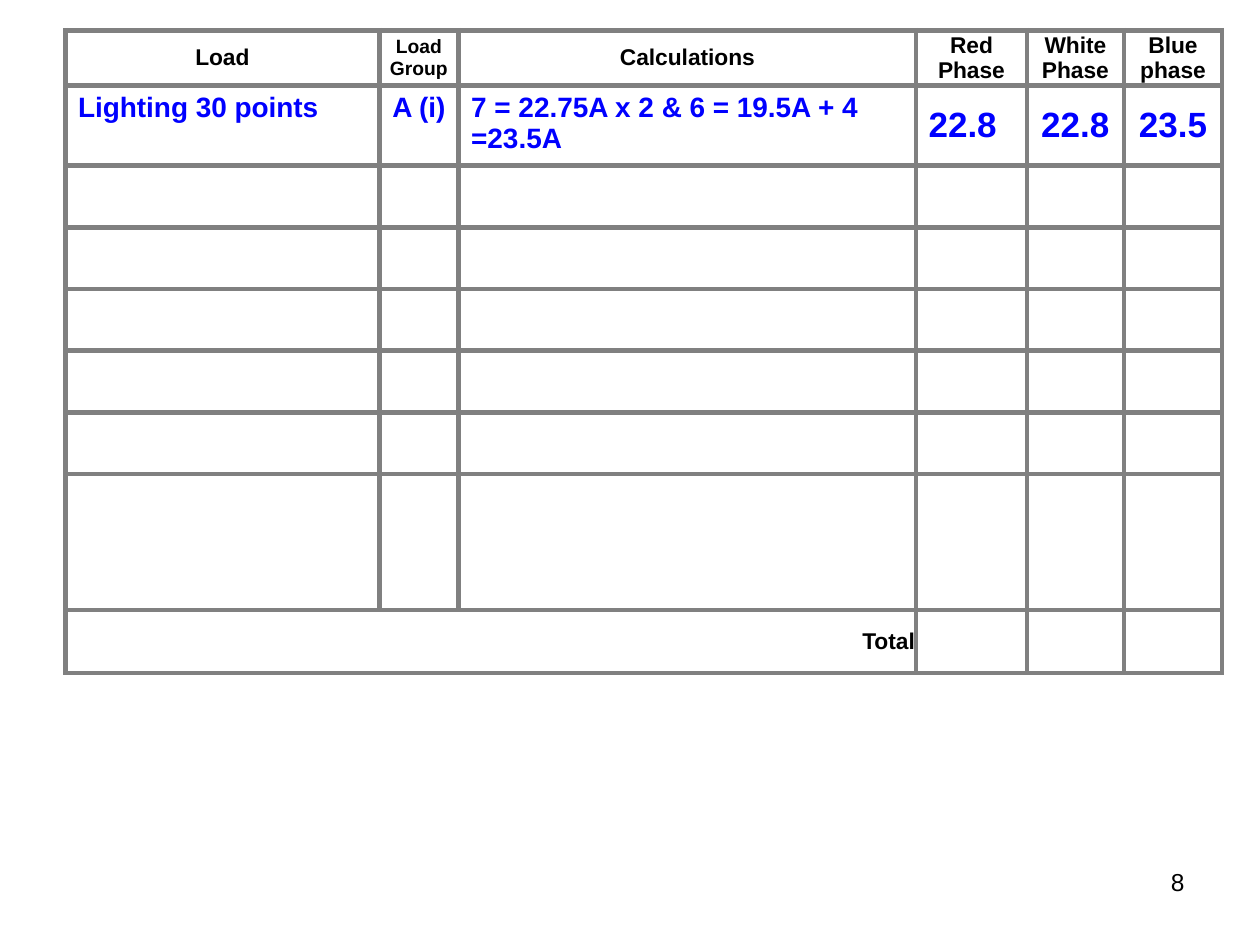
from lxml import etree
from pptx import Presentation
from pptx.dml.color import RGBColor
from pptx.enum.text import MSO_ANCHOR as Anchor, PP_ALIGN as Align
from pptx.oxml.ns import qn
from pptx.util import Inches, Pt

BLACK, BLUE, GRAY, WHITE = "000000", "0000FF", "808080", "FFFFFF"
COLUMNS = [2.49, 0.63, 3.63, 0.88, 0.77, 0.78]
ROWS = [0.44, 0.6] + [0.49] * 5 + [1.08, 0.5]
HEADINGS = [("Load", 13), ("Load Group", 11), ("Calculations", 13),
            ("Red Phase", 13), ("White Phase", 13), ("Blue phase", 13)]
LIGHTING = [
    ("Lighting 30 points", 16, Align.LEFT, Anchor.TOP),
    ("A (i)", 16, Align.CENTER, Anchor.TOP),
    ("7 = 22.75A x 2 & 6 = 19.5A + 4 =23.5A", 16, Align.LEFT, Anchor.TOP),
    ("22.8", 20, Align.LEFT, Anchor.MIDDLE),
    ("22.8", 20, Align.CENTER, Anchor.MIDDLE),
    ("23.5", 20, Align.CENTER, Anchor.MIDDLE),
]
TIGHT = {"margin_left": Inches(0.01), "margin_right": Inches(0.01),
         "margin_top": 0, "margin_bottom": 0}


def color(value):
    return RGBColor.from_string(value)


def set_all(target, values):
    for name, value in values.items():
        setattr(target, name, value)


def write(frame, text, size, align, ink, bold=True):
    para = frame.paragraphs[0]
    para.alignment = align
    span = para.add_run()
    span.text = text
    set_all(span.font, {"name": "Arial", "size": Pt(size), "bold": bold})
    span.font.color.rgb = color(ink)


def add_borders(cell, ink, width):
    properties = cell._tc.get_or_add_tcPr()
    for side in ("lnL", "lnR", "lnT", "lnB"):
        line = etree.SubElement(properties, qn(f"a:{side}"), w=str(Pt(width)))
        fill = etree.SubElement(line, qn("a:solidFill"))
        etree.SubElement(fill, qn("a:srgbClr"), val=ink)


def add_label(cell, text, size, align):
    """A tight black label on white, used for headings and the total."""
    set_all(cell, {"vertical_anchor": Anchor.MIDDLE, **TIGHT})
    cell.fill.solid()
    cell.fill.fore_color.rgb = color(WHITE)
    write(cell.text_frame, text, size, align, BLACK)


def add_load_table(page):
    table = page.shapes.add_table(
        len(ROWS), len(COLUMNS), Inches(0.52), Inches(0.24),
        Inches(sum(COLUMNS)), Inches(sum(ROWS))).table
    set_all(table, {"first_row": False, "horz_banding": False})
    for column, width in zip(table.columns, COLUMNS):
        column.width = Inches(width)
    for row, height in zip(table.rows, ROWS):
        row.height = Inches(height)
    for cell in table.iter_cells():
        add_borders(cell, GRAY, 3)
        cell.fill.background()

    # Headings
    for index, (text, size) in enumerate(HEADINGS):
        add_label(table.cell(0, index), text, size, Align.CENTER)

    # Lighting load
    for index, (text, size, align, anchor) in enumerate(LIGHTING):
        cell = table.cell(1, index)
        cell.vertical_anchor = anchor
        write(cell.text_frame, text, size, align, BLUE)

    # Total
    last = len(ROWS) - 1
    total = table.cell(last, 0)
    total.merge(table.cell(last, 2))
    add_label(total, "Total", 13, Align.RIGHT)


def add_page_number(page, number):
    box = page.shapes.add_textbox(
        Inches(7.17), Inches(6.83), Inches(2.33), Inches(0.52))
    box.text_frame.word_wrap = True
    write(box.text_frame, number, 14, Align.RIGHT, BLACK, bold=False)


def main():
    deck = Presentation()
    set_all(deck, {"slide_width": Inches(10), "slide_height": Inches(7.5)})
    page = deck.slides.add_slide(deck.slide_layouts[6])
    add_page_number(page, "8")
    add_load_table(page)
    deck.save("out.pptx")


if __name__ == "__main__":
    main()
